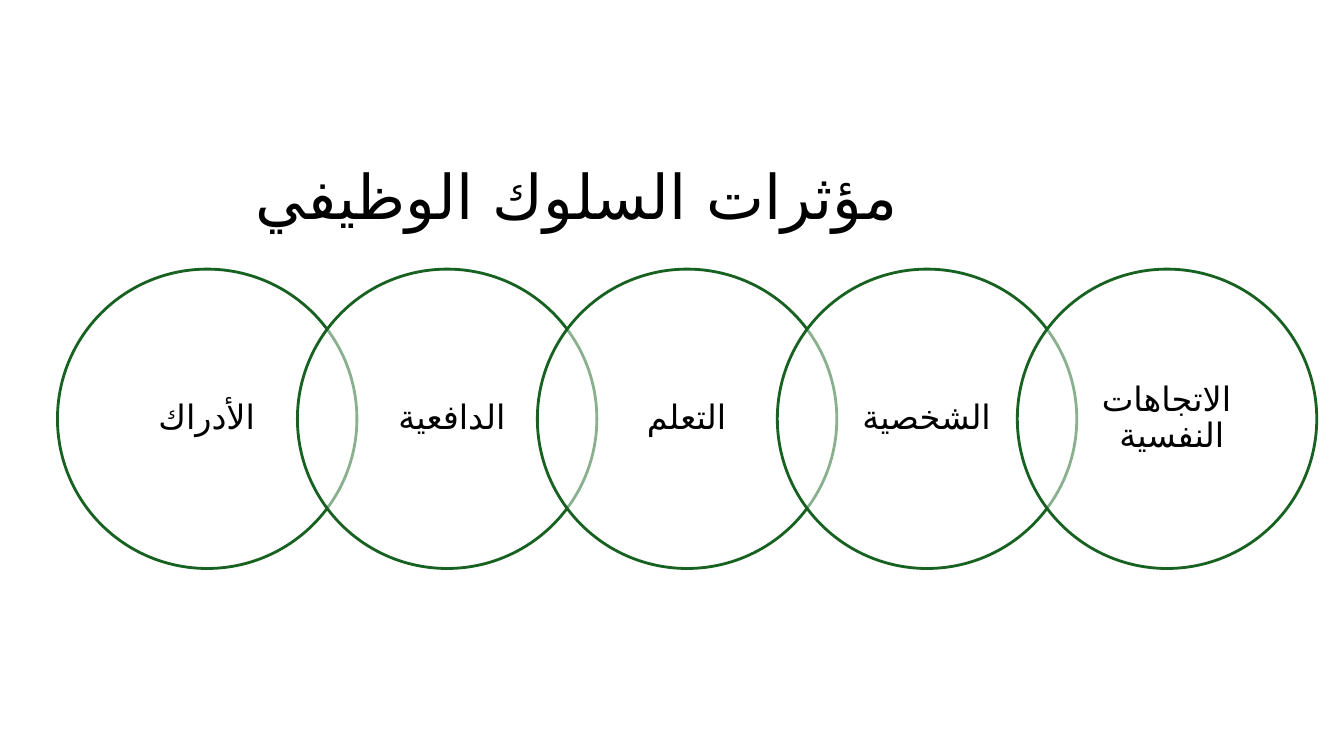
from lxml.etree import SubElement
from pptx import Presentation
from pptx.dml.color import RGBColor
from pptx.enum.shapes import MSO_SHAPE as Shape
from pptx.enum.text import MSO_ANCHOR as Anchor, MSO_AUTO_SIZE as Fit, PP_ALIGN as Align
from pptx.oxml.ns import qn
from pptx.util import Inches, Pt

FONT, ARABIC = "Cabin", "DejaVu Sans"
TOP, SIZE, LEFT, STEP = 2.67, 2.97, 0.57, 2.38
INSET, INNER = 0.43, 2.1
LABELS = ["الأدراك", "الدافعية ", "التعلم", "الشخصية", "الاتجاهات النفسية "]


def color(code):
    return RGBColor.from_string(code)


def write(frame, text, size, align):
    frame.word_wrap = True
    frame.auto_size = Fit.NONE
    frame.vertical_anchor = Anchor.MIDDLE
    para = frame.paragraphs[0]
    para.alignment = align
    para.line_spacing = 0.9
    para._p.get_or_add_pPr().set("rtl", "1")
    run = para.add_run()
    run.text = text
    run.font.name = FONT
    run.font.size = Pt(size)
    run.font.color.rgb = color("000000")
    SubElement(run._r.get_or_add_rPr(), qn("a:cs"), typeface=ARABIC)


def add_title(slide, text):
    title = slide.shapes.title
    title.left, title.top = Inches(-2.49), Inches(1.25)
    title.width, title.height = Inches(11.5), Inches(1.45)
    write(title.text_frame, text, 44, Align.RIGHT)


def add_ring(group, left):
    ring = group.shapes.add_shape(
        Shape.OVAL, Inches(left), Inches(TOP), Inches(SIZE), Inches(SIZE))
    ring.shadow.inherit = False
    ring.fill.solid()
    ring.fill.fore_color.rgb = color("FFFFFF")
    fill = ring._element.spPr.find(qn("a:solidFill"))
    SubElement(fill[0], qn("a:alpha"), val="50000")
    ring.line.color.rgb = color("176121")
    ring.line.width = Pt(2)


def add_label(group, left, text):
    box = group.shapes.add_textbox(
        Inches(left + INSET), Inches(TOP + INSET), Inches(INNER), Inches(INNER))
    frame = box.text_frame
    frame.margin_left = frame.margin_right = Inches(0.16)
    frame.margin_top = frame.margin_bottom = Inches(0.03)
    write(frame, text, 24, Align.CENTER)


def main():
    deck = Presentation()
    deck.slide_width, deck.slide_height = Inches(13.33), Inches(7.5)
    slide = deck.slides.add_slide(deck.slide_layouts[5])
    group = slide.shapes.add_group_shape()
    for index, text in enumerate(LABELS):
        left = LEFT + index * STEP
        add_ring(group, left)
        add_label(group, left, text)
    add_title(slide, "مؤثرات السلوك الوظيفي ")
    deck.save("out.pptx")


if __name__ == "__main__":
    main()
